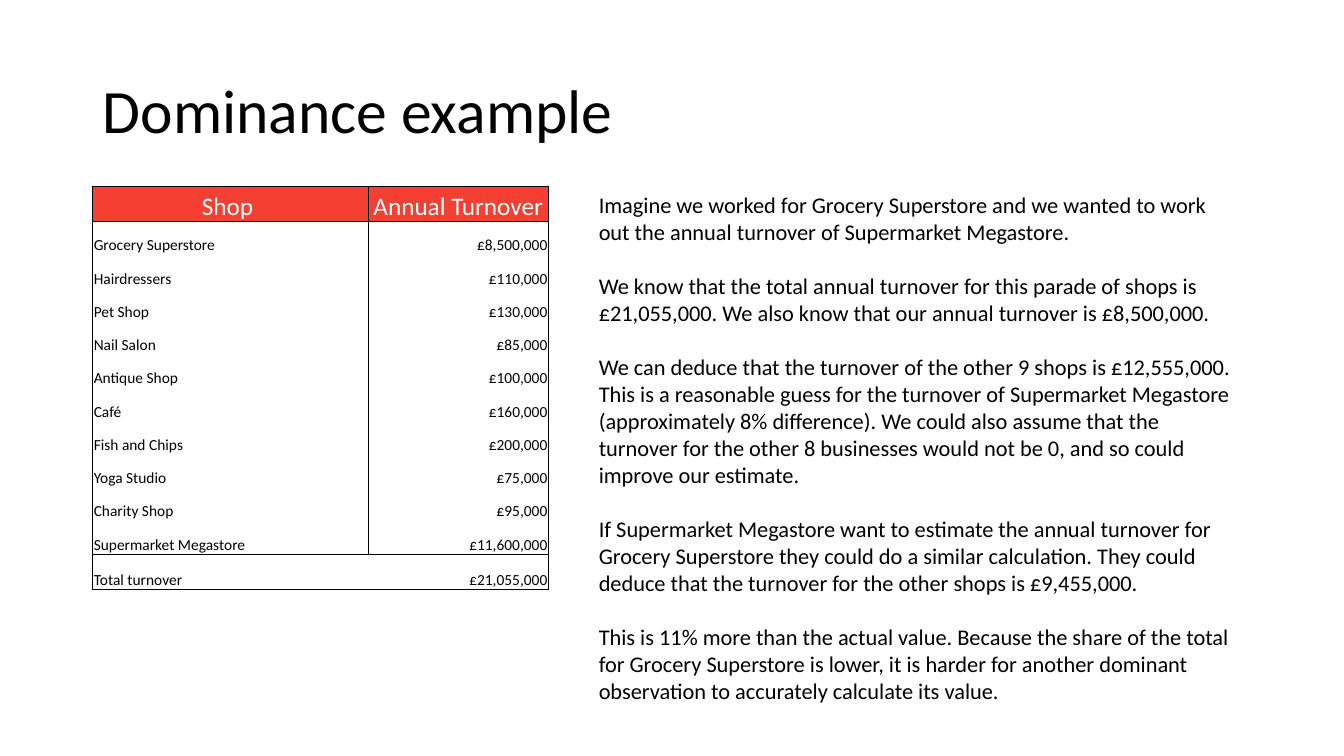
from dataclasses import dataclass

import lxml.etree
import pptx
import pptx.dml.color
import pptx.enum.text
import pptx.oxml.ns
import pptx.util

EMU_PER_PX = 9144  # 100 px to the inch
BLACK = pptx.dml.color.RGBColor(0x00, 0x00, 0x00)
WHITE = pptx.dml.color.RGBColor(0xFF, 0xFF, 0xFF)
RED = pptx.dml.color.RGBColor(0xF5, 0x3F, 0x33)
FONT = "Calibri"
ALIGN = pptx.enum.text.PP_ALIGN
ANCHOR = pptx.enum.text.MSO_ANCHOR
THIN, THICK = 0.5, 1.0
LINE_GAP = 19.5  # one line of 16 pt text


@dataclass(frozen=True)
class Box:
    left: int
    top: int
    width: int
    height: int


@dataclass(frozen=True)
class ShopRow:
    shop: str
    turnover: str
    height: int = 33
    top: float = 0
    bottom: float = 0
    side: float = THIN
    middle: float = THIN
    header: bool = False


TITLE_BOX = Box(92, 40, 1150, 145)
TABLE_BOX = Box(92, 185, 452, 403)
EXPLANATION_BOX = Box(584, 185, 658, 522)
COLUMN_WIDTHS = (273, 179)

ROWS = [
    ShopRow("Shop ", "Annual Turnover", 35, THICK, THICK, THICK, header=True),
    ShopRow("Grocery Superstore", "£8,500,000", top=THICK),
    ShopRow("Hairdressers", "£110,000"),
    ShopRow("Pet Shop", "£130,000"),
    ShopRow("Nail Salon", "£85,000"),
    ShopRow("Antique Shop", "£100,000"),
    ShopRow("Café", "£160,000"),
    ShopRow("Fish and Chips", "£200,000"),
    ShopRow("Yoga Studio", "£75,000"),
    ShopRow("Charity Shop", "£95,000"),
    ShopRow("Supermarket Megastore", "£11,600,000", bottom=THICK),
    ShopRow("Total turnover", "£21,055,000", 35, THICK, THICK, THICK, middle=0),
]

EXPLANATION = [
    "Imagine we worked for Grocery Superstore and we wanted to work out the annual "
    "turnover of Supermarket Megastore.",
    "We know that the total annual turnover for this parade of shops is £21,055,000. "
    "We also know that our annual turnover is £8,500,000.",
    "We can deduce that the turnover of the other 9 shops is £12,555,000. This is a "
    "reasonable guess for the turnover of Supermarket Megastore (approximately 8% "
    "difference). We could also assume that the turnover for the other 8 businesses "
    "would not be 0, and so could improve our estimate.",
    "If Supermarket Megastore want to estimate the annual turnover for Grocery "
    "Superstore they could do a similar calculation. They could deduce that the "
    "turnover for the other shops is £9,455,000.",
    "This is 11% more than the actual value. Because the share of the total for "
    "Grocery Superstore is lower, it is harder for another dominant observation to "
    "accurately calculate its value.",
]


def px(length: int) -> pptx.util.Emu:
    return pptx.util.Emu(length * EMU_PER_PX)


def place(box: Box) -> tuple:
    return px(box.left), px(box.top), px(box.width), px(box.height)


def add_run(paragraph, text: str, size: int, colour=BLACK) -> None:
    run = paragraph.add_run()
    run.text = text
    run.font.name = FONT
    run.font.size = pptx.util.Pt(size)
    run.font.color.rgb = colour


def add_border(cell, side: str, points: float) -> None:
    """Draw one cell edge; a width of 0 hides it."""
    qn = pptx.oxml.ns.qn
    edge = lxml.etree.SubElement(cell._tc.get_or_add_tcPr(), qn(f"a:ln{side}"))
    edge.set("w", str(int(pptx.util.Pt(points))))
    if points:
        fill = lxml.etree.SubElement(edge, qn("a:solidFill"))
        lxml.etree.SubElement(fill, qn("a:srgbClr")).set("val", str(BLACK))
    else:
        lxml.etree.SubElement(edge, qn("a:noFill"))


def fill_cell(cell, row: ShopRow, column: int) -> None:
    left, right = ((row.side, row.middle), (row.middle, row.side))[column]
    for side, points in zip("LRTB", (left, right, row.top, row.bottom)):
        add_border(cell, side, points)
    if row.header:
        cell.fill.solid()
        cell.fill.fore_color.rgb = RED
    else:
        cell.fill.background()
    cell.margin_left = cell.margin_right = cell.margin_top = px(1)
    cell.margin_bottom = 0
    cell.vertical_anchor = ANCHOR.BOTTOM
    paragraph = cell.text_frame.paragraphs[0]
    paragraph.alignment = ALIGN.CENTER if row.header else (ALIGN.LEFT, ALIGN.RIGHT)[column]
    size, colour = (18, WHITE) if row.header else (11, BLACK)
    add_run(paragraph, (row.shop, row.turnover)[column], size, colour)


def add_title(slide, text: str) -> None:
    title = slide.shapes.title
    title.left, title.top, title.width, title.height = place(TITLE_BOX)
    title.text_frame.vertical_anchor = ANCHOR.MIDDLE
    paragraph = title.text_frame.paragraphs[0]
    paragraph.alignment = ALIGN.LEFT
    paragraph.line_spacing = 0.9
    add_run(paragraph, text, 44)


def add_turnover_table(slide) -> None:
    frame = slide.shapes.add_table(len(ROWS), len(COLUMN_WIDTHS), *place(TABLE_BOX))
    turnover = frame.table
    turnover.first_row = turnover.horz_banding = False
    for column, width in enumerate(COLUMN_WIDTHS):
        turnover.columns[column].width = px(width)
    for index, row in enumerate(ROWS):
        turnover.rows[index].height = px(row.height)
        for column in range(len(COLUMN_WIDTHS)):
            fill_cell(turnover.cell(index, column), row, column)


def add_explanation(slide) -> None:
    frame = slide.shapes.add_textbox(*place(EXPLANATION_BOX)).text_frame
    frame.word_wrap = True
    for index, text in enumerate(EXPLANATION):
        paragraph = frame.add_paragraph() if index else frame.paragraphs[0]
        if index:
            paragraph.space_before = pptx.util.Pt(LINE_GAP)
        add_run(paragraph, text, 16)


def main() -> None:
    deck = pptx.Presentation()
    deck.slide_width, deck.slide_height = px(1333), px(750)
    slide = deck.slides.add_slide(deck.slide_layouts[5])

    # Title, shop table on the left, explanation on the right
    add_title(slide, "Dominance example")
    add_turnover_table(slide)
    add_explanation(slide)
    deck.save("out.pptx")


if __name__ == "__main__":
    main()
